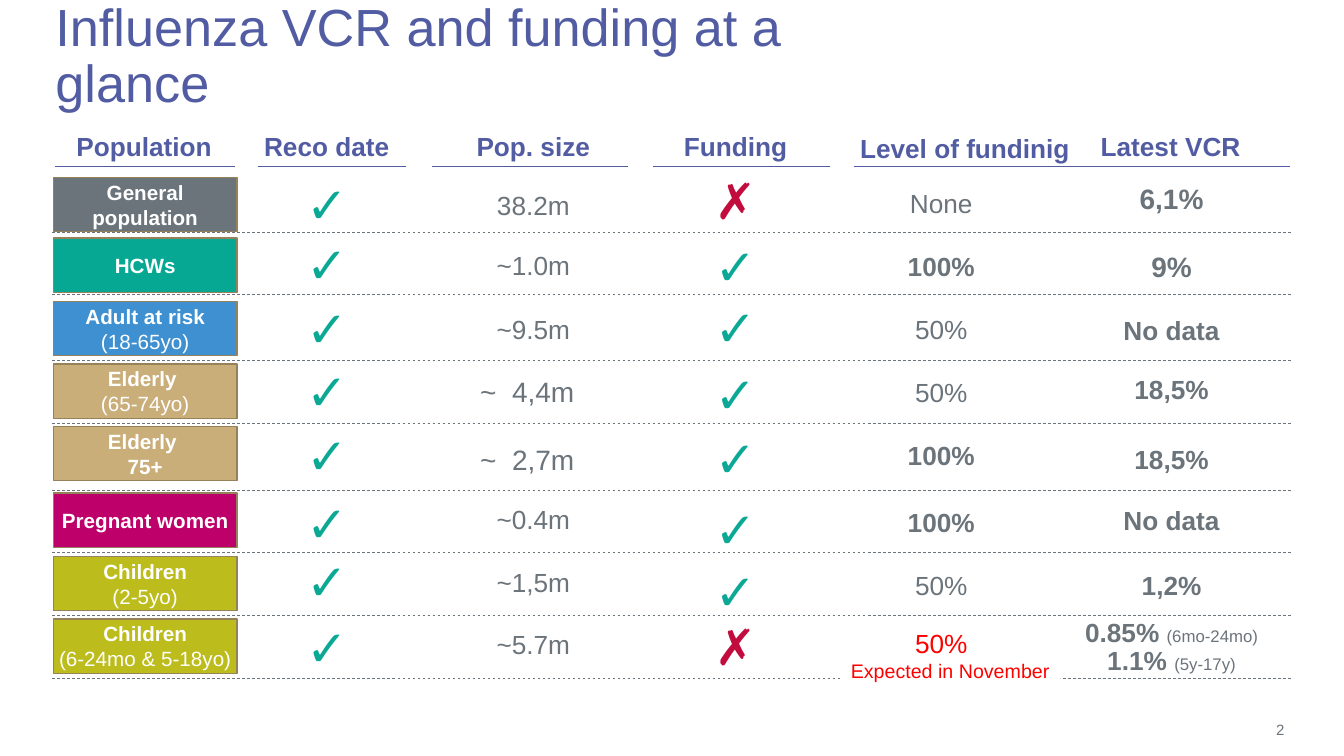
import pptx
import pptx.util
import pptx.dml.color
import pptx.enum.dml
import pptx.enum.shapes
import pptx.enum.text
import pptx.oxml.ns
import lxml.etree

Inches = pptx.util.Inches
Align = pptx.enum.text.PP_ALIGN
Anchor = pptx.enum.text.MSO_ANCHOR

HUES = {
    "blue": "525CA3", "grey": "6B747B", "teal": "07A893", "sky": "3E90D0",
    "tan": "CAAE7A", "pink": "BE006B", "lime": "BCBC1C", "edge": "95815A",
    "tick": "0BA995", "cross": "C30C3E", "red": "FF0000", "white": "FFFFFF",
}
BODY, BIG, NOTE, LABEL = 18.7, 20, 12, 14.7

# Column heads: text, box left, top, width, rule start, rule end
HEADS = [
    ("Population", 0.7, 1.33, 1.46, 0.55, 2.33),
    ("Reco date", 2.53, 1.33, 1.42, 2.56, 4.03),
    ("Pop. size", 4.31, 1.33, 1.96, 4.28, 6.23),
    ("Funding", 6.45, 1.33, 1.69, 6.48, 8.23),
    ("Level of fundinig", 8.4, 1.35, 2.34, 8.47, 10.52),
    ("Latest VCR", 10.36, 1.33, 2.5, 10.44, 12.79),
]
# Columns: left and width
RECO, SIZE, FUND = (3.04, 0.41), (4.29, 2), (7.09, 0.41)
LEVEL, RATE = (8.69, 1.29), (10.57, 2.1)

# Rows: top, height to the dashed rule, fill, label lines (text, bold), then
# reco drop, size (text, drop, points), funding (mark, drop),
# level (text, drop, bold, hue), rate (lines of runs, drop)
ROWS = [
    (1.76, 0.55, "grey", [("General population", True)], 0.05,
     ("38.2m", 0.15, BODY), ("✗", 0.01), ("None", 0.13, False, "grey"),
     ([[("6,1%", BIG, True)]], 0.08)),
    (2.36, 0.56, "teal", [("HCWs", True)], 0.05,
     ("~1.0m", 0.15, BODY), ("✓", 0.07), ("100%", 0.16, True, "grey"),
     ([[("9%", BIG, True)]], 0.15)),
    (2.99, 0.59, "sky", [("Adult at risk", True), ("(18-65yo)", False)], 0.05,
     ("~9.5m", 0.15, BODY), ("✓", 0.04), ("50%", 0.15, False, "grey"),
     ([[("No data", BODY, True)]], 0.16)),
    (3.61, 0.59, "tan", [("Elderly ", True), ("(65-74yo)", False)], 0.06,
     ("~  4,4m", 0.14, BIG), ("✓", 0.09), ("50%", 0.16, False, "grey"),
     ([[("18,5%", BODY, True)]], 0.13)),
    (4.23, 0.63, "tan", [("Elderly ", True), ("75+", True)], 0.07,
     ("~  2,7m", 0.2, BIG), ("✓", 0.1), ("100%", 0.16, True, "grey"),
     ([[("18,5%", BODY, True)]], 0.2)),
    (4.89, 0.59, "pink", [("Pregnant women", True)], 0.09,
     ("~0.4m", 0.14, BODY), ("✓", 0.15), ("100%", 0.17, True, "grey"),
     ([[("No data", BODY, True)]], 0.15)),
    (5.52, 0.58, "lime", [("Children", True), ("(2-5yo)", False)], 0.03,
     ("~1,5m", 0.13, BODY), ("✓", 0.13), ("50%", 0.16, False, "grey"),
     ([[("1,2%", BODY, True)]], 0.16)),
    (6.14, 0.59, "lime", [("Children", True), ("(6-24mo & 5-18yo)", False)], 0.07,
     ("~5.7m", 0.13, BODY), ("✗", 0.06), ("50%", 0.12, False, "red"),
     ([[("0.85% ", BODY, True), ("(6mo-24mo)", NOTE, False)],
       [("1.1% ", BODY, True), ("(5y-17y)", NOTE, False)]], 0.01)),
]


def tint(name):
    return pptx.dml.color.RGBColor.from_string(HUES[name])


def write(frame, lines, hue, align=Align.CENTER, anchor=Anchor.TOP,
          space=0.9, wrap=True, pad=(0, 0)):
    """Fill a text frame with lines of (text, points, bold) runs."""
    frame.word_wrap = wrap
    frame.auto_size = pptx.enum.text.MSO_AUTO_SIZE.NONE
    frame.vertical_anchor = anchor
    frame.margin_left = frame.margin_right = Inches(pad[0])
    frame.margin_top = frame.margin_bottom = Inches(pad[1])
    for i, line in enumerate(lines):
        para = frame.paragraphs[0] if i == 0 else frame.add_paragraph()
        para.alignment = align
        para.line_spacing = space
        for text, size, bold in line:
            run = para.add_run()
            run.text = text
            run.font.name = "Arial"
            run.font.size = pptx.util.Pt(size)
            run.font.bold = bold
            run.font.color.rgb = tint(hue)


def put(slide, box, lines, hue, **look):
    area = slide.shapes.add_textbox(*map(Inches, box))
    write(area.text_frame, lines, hue, **look)


def block(slide, box, fill, edge=None):
    shape = slide.shapes.add_shape(
        pptx.enum.shapes.MSO_SHAPE.RECTANGLE, *map(Inches, box))
    shape.shadow.inherit = False
    shape.fill.solid()
    shape.fill.fore_color.rgb = tint(fill)
    if edge:
        shape.line.color.rgb = tint(edge)
        shape.line.width = pptx.util.Pt(1)
    else:
        shape.line.fill.background()
    return shape


def rule(slide, left, right, y, hue, width, dash=False):
    line = slide.shapes.add_connector(
        pptx.enum.shapes.MSO_CONNECTOR.STRAIGHT,
        Inches(left), Inches(y), Inches(right), Inches(y))
    line.line.color.rgb = tint(hue)
    line.line.width = pptx.util.Pt(width)
    if dash:
        line.line.dash_style = pptx.enum.dml.MSO_LINE.DASH
    props = line._element.spPr
    lxml.etree.SubElement(props, pptx.oxml.ns.qn("a:effectLst"))


def title(slide, box):
    head = slide.shapes.title
    head.left, head.top, head.width, head.height = map(Inches, box)
    write(head.text_frame,
          [[("Influenza VCR and funding at a glance", 37.3, False)]],
          "blue", align=Align.LEFT, anchor=Anchor.MIDDLE)


def heads(slide, y):
    for text, left, top, width, start, end in HEADS:
        put(slide, (left, top, width, 0.31), [[(text, BODY, True)]], "blue")
        rule(slide, start, end, y, "blue", 0.75)


def mark(slide, col, top, sign):
    put(slide, (col[0], top, col[1], 0.41), [[(sign, 35.6, False)]],
        "tick" if sign == "✓" else "cross",
        anchor=Anchor.MIDDLE, space=1, wrap=False)


def row(slide, left, right, data):
    top, deep, fill, label, reco, size, fund, level, rate = data
    rule(slide, left, right, top + deep, "grey", 0.5, dash=True)
    # Population label
    tag = block(slide, (left + 0.01, top, 1.82, 0.54), fill, "edge")
    write(tag.text_frame, [[(text, LABEL, bold)] for text, bold in label],
          "white", anchor=Anchor.MIDDLE, space=1, pad=(0, 0.05))
    # Marks
    mark(slide, RECO, top + reco, "✓")
    mark(slide, FUND, top + fund[1], fund[0])
    # Figures
    text, drop, points = size
    shift = 0.06 if points == BIG else 0
    put(slide, (SIZE[0] - shift, top + drop, SIZE[1], 0.22),
        [[(text, points, False)]], "grey")
    text, drop, bold, hue = level
    put(slide, (LEVEL[0], top + drop, LEVEL[1], 0.25),
        [[(text, BODY, bold)]], hue)
    lines, drop = rate
    put(slide, (RATE[0], top + drop, RATE[1], 0.35), lines, "grey")


def note(slide, box):
    flag = block(slide, box, "white")
    write(flag.text_frame, [[("Expected in November", 14, False)]], "red",
          align=Align.LEFT, space=1, wrap=False, pad=(0.1, 0.05))


def main():
    deck = pptx.Presentation()
    deck.slide_width, deck.slide_height = Inches(13.33), Inches(7.5)
    slide = deck.slides.add_slide(deck.slide_layouts[5])
    title(slide, (0.55, 0.3, 8.14, 0.54))
    heads(slide, 1.65)
    for data in ROWS[:-1]:
        row(slide, 0.52, 12.8, data)
    row(slide, 0.52, 12.8, ROWS[-1])
    note(slide, (8.34, 6.49, 2.18, 0.34))
    # Slide number
    put(slide, (12.29, 7.15, 0.45, 0.18), [[("2", 10.7, False)]], "grey",
        align=Align.RIGHT, space=1)
    deck.save("out.pptx")


if __name__ == "__main__":
    main()
